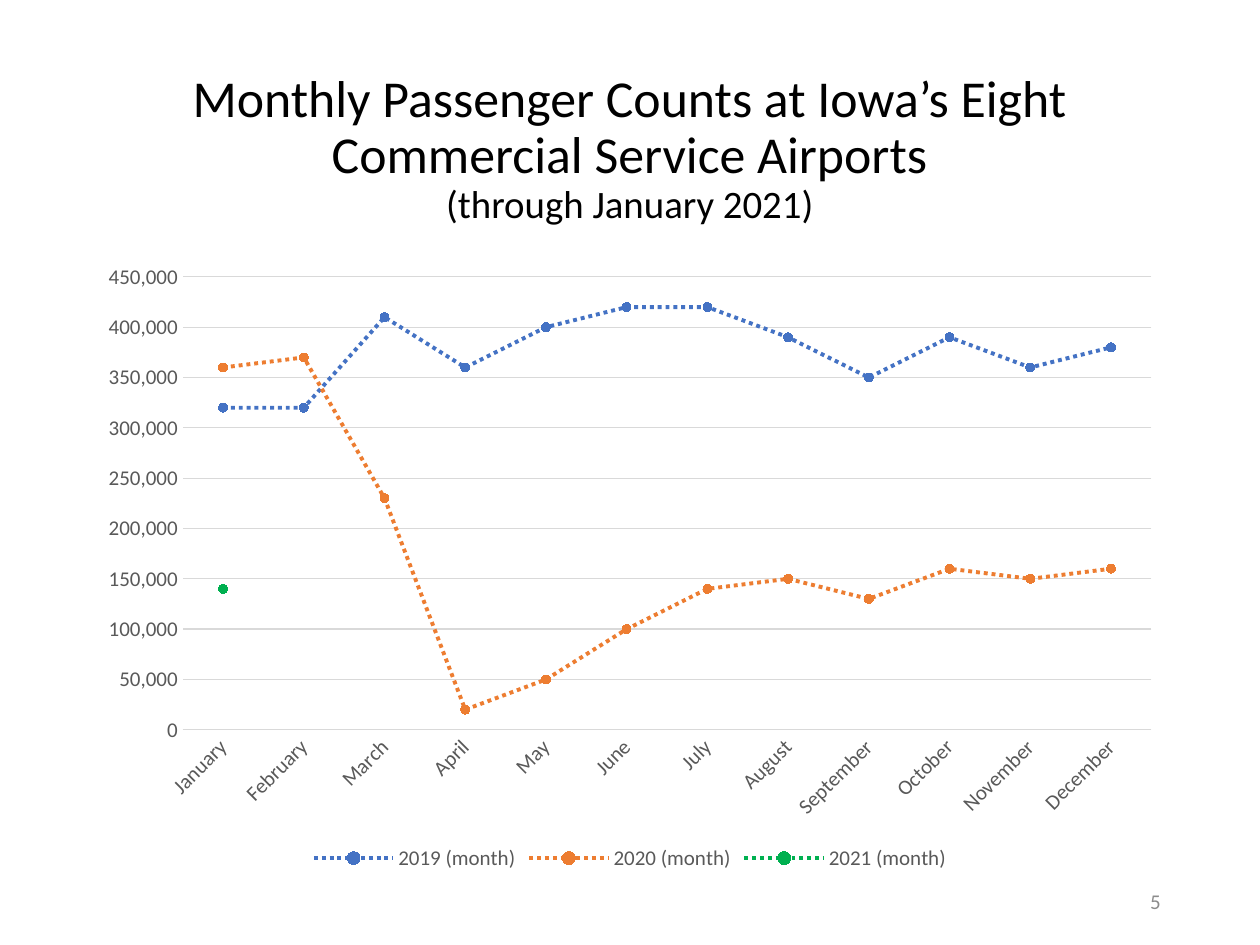
from pptx import Presentation
from pptx.chart.data import CategoryChartData
from pptx.dml.color import RGBColor
from pptx.enum import chart as ch, dml, text
from pptx.util import Inches, Pt

HUES = {"title": "000000", "label": "595959", "grid": "D9D9D9", "page": "8C8C8C",
        "2019": "4472C4", "2020": "ED7D31", "2021": "00B050"}
MONTHS = ["January", "February", "March", "April", "May", "June", "July",
          "August", "September", "October", "November", "December"]
# Passengers in thousands
COUNTS = {
    "2019": [320, 320, 410, 360, 400, 420, 420, 390, 350, 390, 360, 380],
    "2020": [360, 370, 230, 20, 50, 100, 140, 150, 130, 160, 150, 160],
    "2021": [140] + [None] * 11,
}
LEFT, WIDTH = 0.69, 8.62


def style(font, size, hue):
    for key, val in {"name": "Calibri", "size": Pt(size), "bold": False}.items():
        setattr(font, key, val)
    font.color.rgb = RGBColor.from_string(HUES[hue])


def rule(line, hue, width):
    line.color.rgb = RGBColor.from_string(HUES[hue])
    line.width = Pt(width)


prs = Presentation()
prs.slide_width, prs.slide_height = Inches(10), Inches(7.5)
slide = prs.slides.add_slide(prs.slide_layouts[5])

# Title
title = slide.shapes.title
place = {"left": LEFT, "top": 0.4, "width": WIDTH, "height": 1.45}
for key, val in place.items():
    setattr(title, key, Inches(val))
frame = title.text_frame
frame.text = ("Monthly Passenger Counts at Iowa’s Eight Commercial Service Airports\n"
              "(through January 2021)")
frame.auto_size = text.MSO_AUTO_SIZE.NONE
frame.vertical_anchor = text.MSO_ANCHOR.BOTTOM
for para, size in zip(frame.paragraphs, (29.6, 22.2)):
    para.alignment = text.PP_ALIGN.CENTER
    para.line_spacing = 0.9
    para.space_before = Pt(0)
    style(para.runs[0].font, size, "title")

# Chart
data = CategoryChartData(number_format="#,##0")
data.categories = MONTHS
for year, counts in COUNTS.items():
    data.add_series(f"{year} (month)", [n and n * 1000 for n in counts])
chart = slide.shapes.add_chart(
    ch.XL_CHART_TYPE.LINE_MARKERS, Inches(LEFT), Inches(2), Inches(WIDTH),
    Inches(4.95), data).chart
style(chart.font, 12, "label")
chart.has_title = False
chart.has_legend = True
legend = chart.legend
legend.position = ch.XL_LEGEND_POSITION.BOTTOM
legend.include_in_layout = False
style(legend.font, 12, "label")

months, totals = chart.category_axis, chart.value_axis
for axis in (months, totals):
    axis.major_tick_mark = axis.minor_tick_mark = ch.XL_TICK_MARK.NONE
    style(axis.tick_labels.font, 12, "label")
rule(months.format.line, "grid", 0.75)
months.tick_labels.font._element.getparent().getparent().getparent().find(
    "{*}bodyPr").set("rot", "-2700000")
for key, val in {"minimum_scale": 0, "maximum_scale": 450000,
                 "major_unit": 50000, "has_major_gridlines": True}.items():
    setattr(totals, key, val)
totals.tick_labels.number_format = "#,##0"
totals.tick_labels.number_format_is_linked = False
totals.format.line.fill.background()
rule(totals.major_gridlines.format.line, "grid", 0.75)

plot = chart.plots[0]
plot.vary_by_categories = False
for year, series in zip(COUNTS, plot.series):
    series.smooth = False
    rule(series.format.line, year, 2.25)
    series.format.line.dash_style = dml.MSO_LINE.ROUND_DOT
    mark = series.marker
    mark.style, mark.size = ch.XL_MARKER_STYLE.CIRCLE, 5
    mark.format.fill.solid()
    mark.format.fill.fore_color.rgb = RGBColor.from_string(HUES[year])
    rule(mark.format.line, year, 0.75)

# Page number
page = slide.shapes.add_textbox(Inches(7.06), Inches(6.95), Inches(2.25), Inches(0.4))
frame = page.text_frame
frame.word_wrap = True
frame.vertical_anchor = text.MSO_ANCHOR.MIDDLE
frame.text = "5"
frame.paragraphs[0].alignment = text.PP_ALIGN.RIGHT
style(frame.paragraphs[0].runs[0].font, 12, "page")

prs.save("out.pptx")
